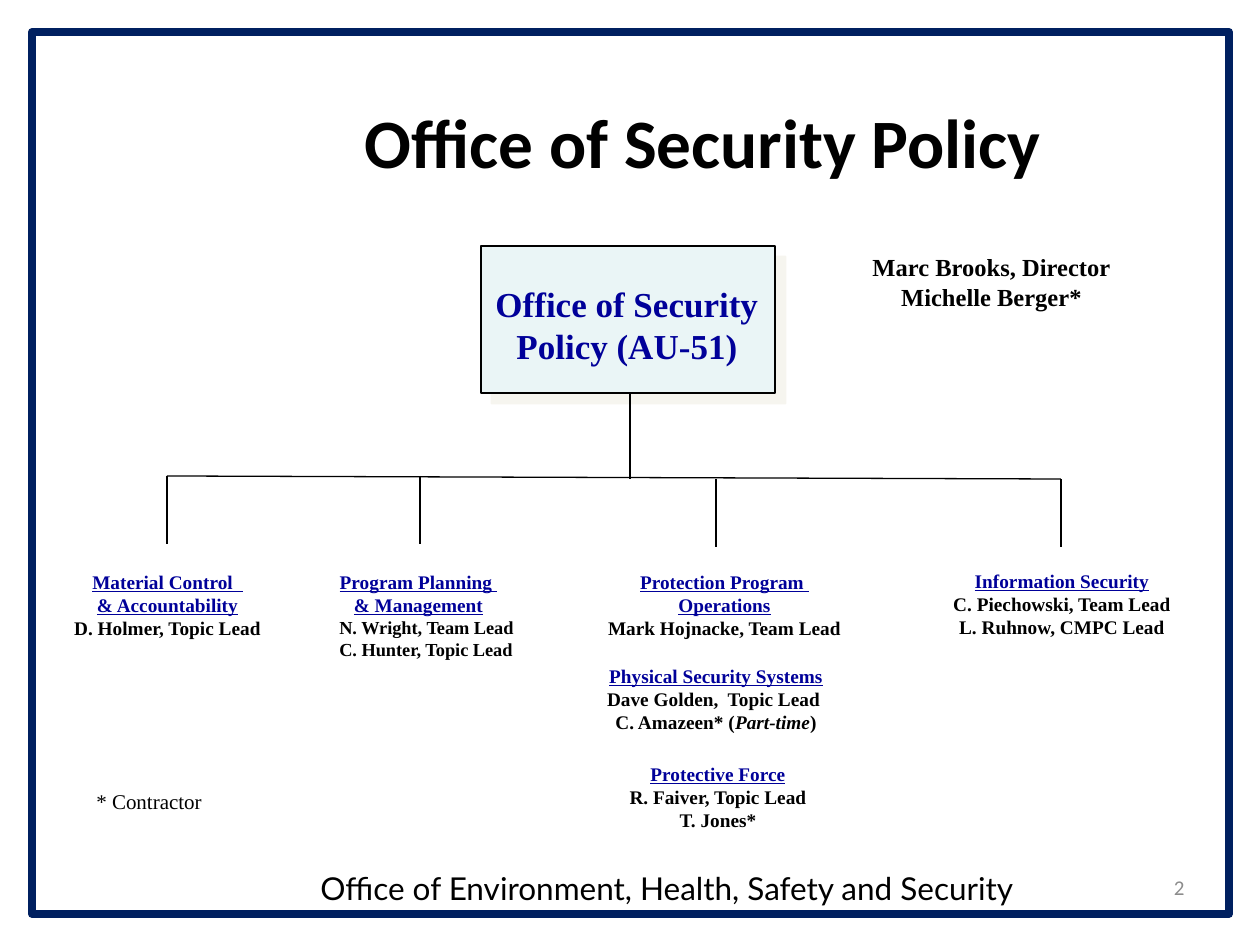
from lxml.etree import SubElement
from pptx import Presentation
from pptx.dml.color import RGBColor
from pptx.enum.shapes import MSO_CONNECTOR, MSO_SHAPE
from pptx.enum.text import MSO_ANCHOR, PP_ALIGN
from pptx.oxml.ns import qn
from pptx.util import Emu, Pt

PX = 914400 / 126
SERIF = "Times New Roman"
BLACK, NAVY, BLUE = "000000", "002060", "000099"

HEADING = dict(name=SERIF, size=Pt(11), bold=True, underline=True, color=BLUE)
MEMBER = dict(HEADING, underline=False, color=BLACK)
SMALL_MEMBER = dict(MEMBER, size=Pt(10.5))
PART_TIME = dict(MEMBER, italic=True)
TITLE = dict(name="Calibri", size=Pt(39.6), bold=True, color=BLACK)
OFFICE = dict(name=SERIF, size=Pt(20), bold=True, color=BLUE)
LEADER = dict(name=SERIF, size=Pt(14), bold=True, color=BLACK)
NOTE = dict(name=SERIF, size=Pt(12), color=BLACK)
FOOTER = dict(name="Lato", size=Pt(18), color=BLACK)
NUMBER = dict(name="Calibri", size=Pt(12), color="8C8C8C")

HANGING = dict(marL=48, indent=-48)
MEMBER_INDENT = dict(marL=23)


def px(length):
    return Emu(round(length * PX))


def paint(color_format, color):
    color_format.rgb = RGBColor.from_string(color)


def set_font(font, style):
    for key, value in style.items():
        if key == "color":
            font.fill.solid()
            paint(font.fill.fore_color, value)
        else:
            setattr(font, key, value)


def add_text(slide, box, lines, align=PP_ALIGN.CENTER, anchor=MSO_ANCHOR.TOP, indent=None):
    """Each line is a list of (words, style) pairs."""
    frame = slide.shapes.add_textbox(*map(px, box)).text_frame
    frame.word_wrap = True
    frame.vertical_anchor = anchor
    for number, line in enumerate(lines):
        paragraph = frame.add_paragraph() if number else frame.paragraphs[0]
        paragraph.alignment = align
        set_indent(paragraph, indent or {})
        for words, style in line:
            run = paragraph.add_run()
            run.text = words
            set_font(run.font, style)
    return frame


def set_indent(paragraph, indent):
    properties = paragraph._p.get_or_add_pPr()
    for key, length in indent.items():
        properties.set(key, str(px(length)))


def add_rect(slide, box, line_color, line_width, fill=None):
    rect = slide.shapes.add_shape(MSO_SHAPE.RECTANGLE, *map(px, box))
    rect.shadow.inherit = False
    if fill:
        rect.fill.solid()
        paint(rect.fill.fore_color, fill)
    else:
        rect.fill.background()
    paint(rect.line.color, line_color)
    rect.line.width = Pt(line_width)
    return rect


def add_line(slide, x1, y1, x2, y2):
    line = slide.shapes.add_connector(MSO_CONNECTOR.STRAIGHT, *map(px, (x1, y1, x2, y2)))
    paint(line.line.color, BLACK)
    line.line.width = Pt(0.75)
    SubElement(line._element.spPr, qn("a:effectLst"))


def add_page(slide, box):
    """Border, title, footer and slide number."""
    left, top, width, height = box
    add_rect(slide, box, NAVY, 4.5)
    add_text(slide, (left + 189, top + 63, 964, 91),
             [[("Office of Security Policy", TITLE)]], anchor=MSO_ANCHOR.MIDDLE)
    add_text(slide, (left + 252, top + height - 51, 766, 50),
             [[("Office of Environment, Health, Safety and Security", FOOTER)]])
    add_text(slide, (left + width - 164, top + height - 52, 132, 50),
             [[("2", NUMBER)]], PP_ALIGN.RIGHT, MSO_ANCHOR.MIDDLE)


def add_office(slide, box):
    """Shadowed office box with its leaders on the right."""
    left, top, width, height = box
    office = add_rect(slide, box, BLACK, 1, "EAF5F6")
    effects = office._element.spPr.find(qn("a:effectLst"))
    shadow = SubElement(effects, qn("a:outerShdw"), dist=str(Pt(8.5)),
                        dir="2700000", algn="ctr", rotWithShape="0")
    tint = SubElement(shadow, qn("a:srgbClr"), val="EEECE1")
    SubElement(tint, qn("a:alpha"), val="50000")
    add_text(slide, (left, top + 30, width - 2, height - 50),
             [[("Office of Security Policy (AU-51)", OFFICE)]])
    add_text(slide, (left + width, top, 433, 72),
             [[("Marc Brooks, Director", LEADER)], [("Michelle Berger*", LEADER)]])


def add_branches(slide, box, trunk, drops):
    """Trunk from the office, a slightly sloping bar and a drop to each team."""
    left, top, width, height = box
    slope, drop_height = 3, 68
    bar = top + height - drop_height - slope
    add_line(slide, left, bar, left + width, bar + slope)
    add_line(slide, left + trunk, top, left + trunk, bar + slope)
    for drop in drops:
        start = bar + (slope if drop > width / 2 else 0)
        add_line(slide, left + drop, start, left + drop, start + drop_height)


def add_team(slide, box, headings, members):
    lines = [[(words, HEADING)] for words in headings]
    lines += [[(words, MEMBER)] if isinstance(words, str) else words for words in members]
    return add_text(slide, box, lines, indent=HANGING)


def add_teams(slide, box):
    left, top, _, _ = box
    part_time = [("C. Amazeen* (", MEMBER), ("Part-time", PART_TIME), (")", MEMBER)]
    teams = [
        (0, 1, 239, ["Material Control  ", "& Accountability"], ["D. Holmer, Topic Lead"]),
        (540, 1, 273, ["Protection Program ", "Operations"], ["Mark Hojnacke, Team Lead"]),
        (447, 95, 442, ["Physical Security Systems"],
         ["Dave Golden,  Topic Lead ", part_time]),
        (557, 193, 226, ["Protective Force"], ["R. Faiver, Topic Lead", "T. Jones*"]),
        (874, 0, 280, ["Information Security"],
         ["C. Piechowski, Team Lead", "L. Ruhnow, CMPC Lead"]),
    ]
    for x, y, width, headings, members in teams:
        add_team(slide, (left + x, top + y, width, 83), headings, members)

    # Planning team: members are left-aligned under a centred heading
    planning = add_team(slide, (left + 256, top + 1, 229, 105),
                        ["Program Planning ", "& Management"], [])
    for words in ("N. Wright, Team Lead", "C. Hunter, Topic Lead"):
        paragraph = planning.add_paragraph()
        set_indent(paragraph, MEMBER_INDENT)
        run = paragraph.add_run()
        run.text = words
        set_font(run.font, SMALL_MEMBER)

    add_text(slide, (left + 36, top + 219, 252, 38), [[("* Contractor", NOTE)]],
             PP_ALIGN.LEFT, indent=HANGING)


def main():
    deck = Presentation()
    deck.slide_width, deck.slide_height = px(1260), px(945)
    slide = deck.slides.add_slide(deck.slide_layouts[6])
    add_page(slide, (32, 32, 1197, 882))
    add_office(slide, (481, 246, 294, 147))
    add_branches(slide, (167, 393, 894, 154), 463, (0, 253, 549, 894))
    add_teams(slide, (48, 563, 1154, 276))
    deck.save("out.pptx")


if __name__ == "__main__":
    main()
